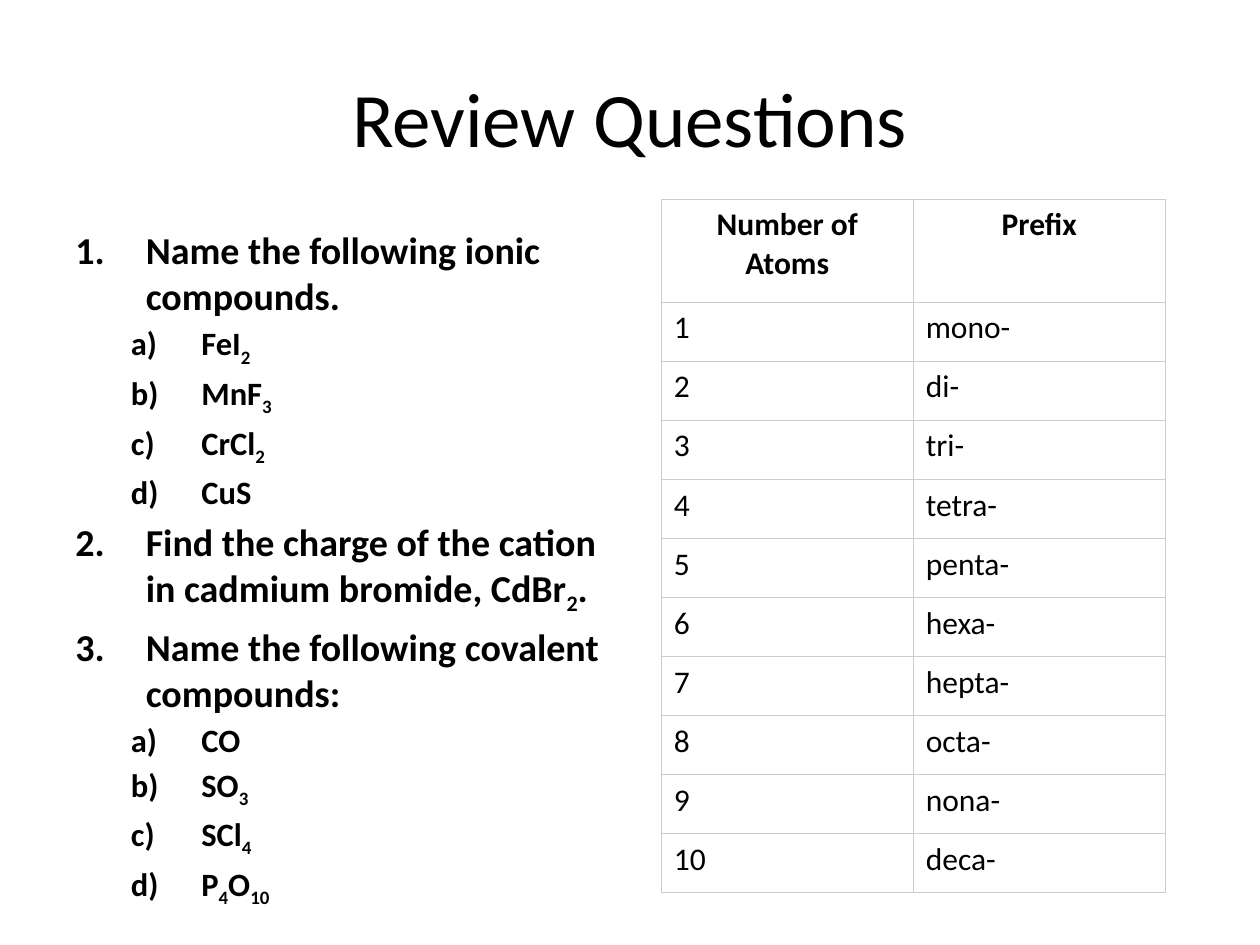
from lxml import etree
from pptx import Presentation
from pptx.dml.color import RGBColor
from pptx.enum.text import MSO_ANCHOR, PP_ALIGN
from pptx.oxml.ns import qn
from pptx.util import Cm, Pt

CENTER, LEFT = PP_ALIGN.CENTER, PP_ALIGN.LEFT
MIDDLE, TOP = MSO_ANCHOR.MIDDLE, MSO_ANCHOR.TOP
TITLE_ONLY = 5

QUESTIONS = [
    (0, "Name the following ionic compounds."),
    (1, "FeI_2_"),
    (1, "MnF_3_"),
    (1, "CrCl_2_"),
    (1, "CuS"),
    (0, "Find the charge of the cation in cadmium bromide, CdBr_2_."),
    (0, "Name the following covalent compounds:"),
    (1, "CO"),
    (1, "SO_3_"),
    (1, "SCl_4_"),
    (1, "P_4_O_10_"),
]
LEVELS = [
    {"size": 21.7, "before": 4.3, "margin": 1.42, "numbering": "arabicPeriod"},
    {"size": 18.6, "before": 3, "margin": 2.54, "numbering": "alphaLcParenR"},
]
HANGING = 1.42
HEADERS = ("Number of Atoms", "Prefix")
PREFIXES = ["mono-", "di-", "tri-", "tetra-", "penta-",
            "hexa-", "hepta-", "octa-", "nona-", "deca-"]


def color(value):
    """Return the colour for a hex string."""
    return RGBColor.from_string(value)


class SlideBuilder:
    """Hold the style and the current slide."""

    font_name = "Calibri"
    text_color = "000000"
    cell_color = "FFFFFF"
    border_color = "CCCCCC"

    def __init__(self, presentation):
        """Add a title-only slide to the presentation."""
        self.slide = presentation.slides.add_slide(presentation.slide_layouts[TITLE_ONLY])

    def format_font(self, font, size, bold=False):
        """Apply the text style to a font."""
        for name, value in {"name": self.font_name, "size": Pt(size), "bold": bold}.items():
            setattr(font, name, value)
        font.color.rgb = color(self.text_color)

    def title(self, text, left, top, width, height):
        """Place and fill the title placeholder."""
        shape = self.slide.shapes.title
        box = {"left": left, "top": top, "width": width, "height": height}
        for name, value in box.items():
            setattr(shape, name, Cm(value))
        frame = shape.text_frame
        frame.text = text
        frame.vertical_anchor = MIDDLE
        paragraph = frame.paragraphs[0]
        paragraph.alignment = CENTER
        self.format_font(paragraph.runs[0].font, 44)

    def numbered_list(self, items, left, top, width, height):
        """Add a two-level numbered list with subscripts between underscores."""
        shape = self.slide.shapes.add_textbox(Cm(left), Cm(top), Cm(width), Cm(height))
        frame = shape.text_frame
        frame.word_wrap = True
        frame.vertical_anchor = TOP
        for index, (level, text) in enumerate(items):
            paragraph = frame.add_paragraph() if index else frame.paragraphs[0]
            style = LEVELS[level]
            paragraph.level = level
            paragraph.alignment = LEFT
            paragraph.space_before = Pt(style["before"] if index else 0)
            properties = paragraph._p.get_or_add_pPr()
            properties.set("marL", str(Cm(style["margin"])))
            properties.set("indent", str(-Cm(HANGING)))
            etree.SubElement(properties, qn("a:buFont"), typeface=self.font_name)
            etree.SubElement(properties, qn("a:buAutoNum"), type=style["numbering"])
            for position, part in enumerate(text.split("_")):
                if part:
                    run = paragraph.add_run()
                    run.text = part
                    self.format_font(run.font, style["size"], True)
                    if position % 2:
                        run._r.get_or_add_rPr().set("baseline", "-25000")

    def cell(self, cell, text, is_header):
        """Fill and format one table cell."""
        properties = cell._tc.get_or_add_tcPr()
        for side in ("lnL", "lnR", "lnT", "lnB"):
            line = etree.SubElement(properties, qn(f"a:{side}"), w=str(Pt(0.75)))
            fill = etree.SubElement(line, qn("a:solidFill"))
            etree.SubElement(fill, qn("a:srgbClr"), val=self.border_color)
        cell.fill.solid()
        cell.fill.fore_color.rgb = color(self.cell_color)
        cell.vertical_anchor = TOP
        cell.text = text
        paragraph = cell.text_frame.paragraphs[0]
        paragraph.alignment = CENTER if is_header else LEFT
        self.format_font(paragraph.runs[0].font, 18, is_header)

    def table(self, rows, left, top, width, header_height, row_height):
        """Add a bordered table with a header row."""
        height = header_height + row_height * (len(rows) - 1)
        shape = self.slide.shapes.add_table(
            len(rows), len(rows[0]), Cm(left), Cm(top), Cm(width), Cm(height))
        table = shape.table
        table.horz_banding = False
        for row_index, values in enumerate(rows):
            is_header = row_index == 0
            table.rows[row_index].height = Cm(header_height if is_header else row_height)
            for column_index, text in enumerate(values):
                self.cell(table.cell(row_index, column_index), text, is_header)


def main():
    """Build and save the review slide."""
    presentation = Presentation()
    presentation.slide_width = Cm(25.4)
    presentation.slide_height = Cm(19.05)
    builder = SlideBuilder(presentation)
    builder.title("Review Questions", 1.27, 0.76, 22.86, 3.18)
    builder.numbered_list(QUESTIONS, 1.27, 4.45, 11.23, 12.57)
    numbered_prefixes = [(str(number), prefix) for number, prefix in enumerate(PREFIXES, 1)]
    builder.table([HEADERS] + numbered_prefixes, 13.33, 4.02, 10.16, 2.08, 1.19)
    presentation.save("out.pptx")


if __name__ == "__main__":
    main()
